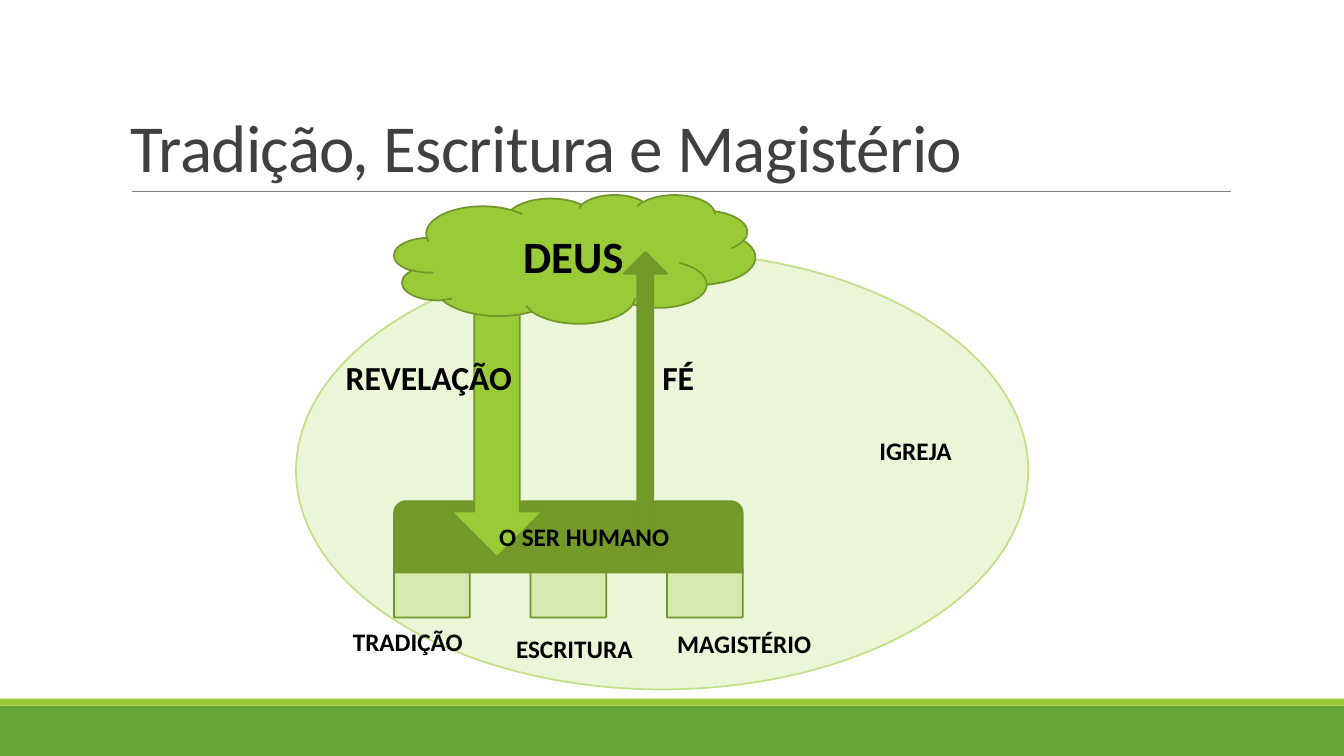
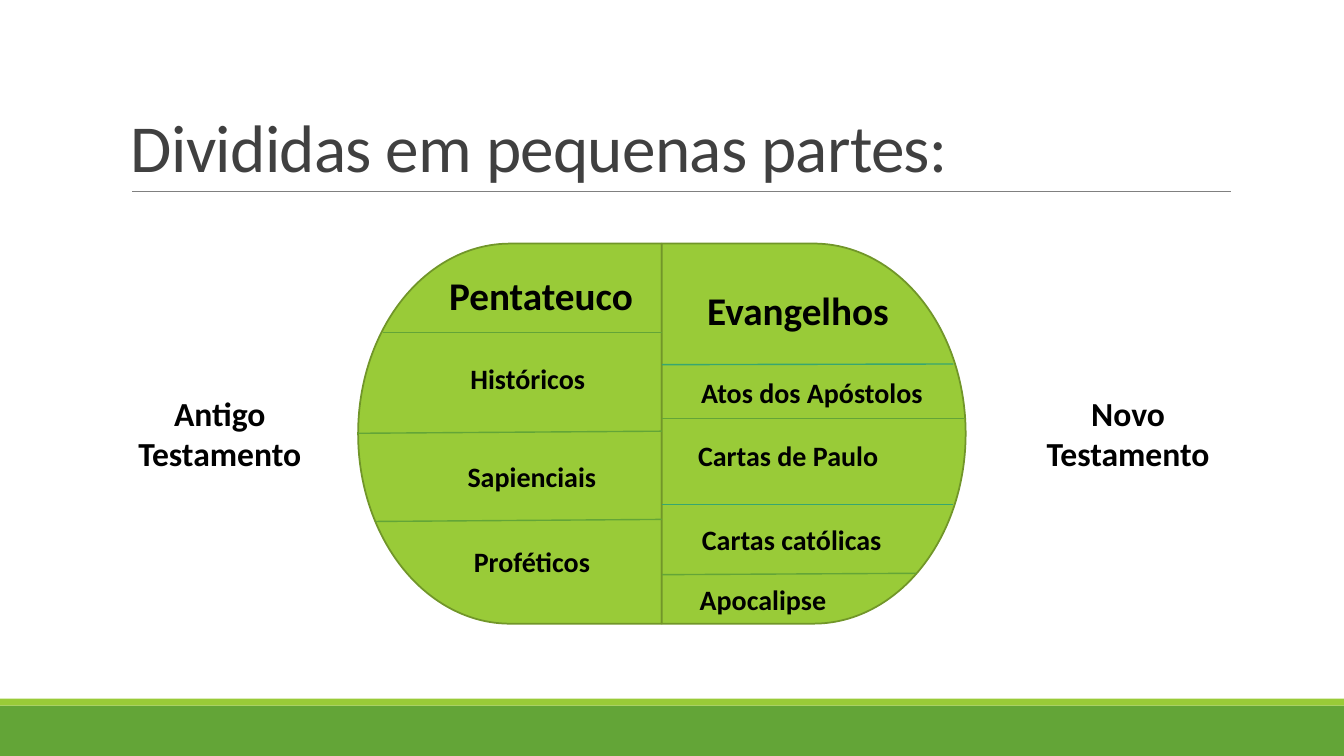
from dataclasses import dataclass

from lxml import etree
from pptx import Presentation
from pptx.dml.color import RGBColor
from pptx.enum.shapes import MSO_CONNECTOR, MSO_SHAPE
from pptx.enum.text import MSO_ANCHOR, PP_ALIGN
from pptx.oxml.ns import qn
from pptx.util import Pt

STRAIGHT = MSO_CONNECTOR.STRAIGHT
RECT = MSO_SHAPE.RECTANGLE
OVAL = MSO_SHAPE.OVAL
PILLAR = MSO_SHAPE.UP_ARROW_CALLOUT
ROUND_TOP = MSO_SHAPE.ROUND_2_SAME_RECTANGLE
DOWN_ARROW = MSO_SHAPE.DOWN_ARROW
UP_ARROW = MSO_SHAPE.UP_ARROW
CLOUD = MSO_SHAPE.CLOUD
DELAY = MSO_SHAPE.FLOWCHART_DELAY
CENTER = PP_ALIGN.CENTER
BOTTOM = MSO_ANCHOR.BOTTOM


@dataclass(frozen=True)
class Theme:
    font: str = "Calibri"
    title: str = "404040"
    text: str = "000000"
    rule: str = "808080"
    green: str = "63A537"
    lime: str = "99CB38"
    olive: str = "739A28"
    outline: str = "719629"
    pale: str = "EBF5D7"
    pale_outline: str = "C2E088"
    light: str = "D6EAAF"
    teal: str = "37A76F"
    title_size: int = 48
    huge: int = 32
    big: int = 28
    medium: int = 24
    normal: int = 20
    small: int = 18
    outline_width: float = 1.25


T = Theme()
WIDTH, HEIGHT = 960, 540

# Slide 1: labels are (text, size, left, top, width)
CHURCH_TITLE = "Tradição, Escritura e Magistério"
CHURCH_LABELS = [
    ("DEUS", T.huge, 360.5, 160, 98),
    ("REVELAÇÃO", T.medium, 239, 251.5, 134.5),
    ("FÉ", T.medium, 457, 251.5, 55),
    ("O SER HUMANO", T.small, 343.5, 368.5, 147.5),
    ("TRADIÇÃO", T.small, 239, 443.5, 104.5),
    ("ESCRITURA", T.small, 358, 449, 104.5),
    ("MAGISTÉRIO", T.small, 476.5, 445, 110),
    ("IGREJA", T.small, 599, 307.5, 110),
]
HUMAN = (281.5, 358, 249, 51)
PILLARS, PILLAR_TOP, PILLAR_W, PILLAR_H = 3, 388, 54, 53

# Slide 2: dividers are (outer x, outer y, y at the seam, colour)
BOOKS_TITLE = "Divididas em pequenas partes:"
BOOKS_LABELS = [
    ("Antigo Testamento", T.medium, 86.5, 277, 141),
    ("Novo Testamento", T.medium, 733, 277, 145.5),
    ("Pentateuco", T.big, 309.5, 190, 154),
    ("Históricos", T.normal, 306.5, 255, 141),
    ("Sapienciais", T.normal, 309.5, 325, 141),
    ("Proféticos", T.normal, 309.5, 385.5, 141),
    ("Evangelhos", T.big, 492.5, 201, 155),
    ("Atos dos Apóstolos", T.normal, 492.5, 264.5, 175),
    ("Cartas de Paulo", T.normal, 474, 309.5, 178),
    ("Cartas católicas", T.normal, 476.5, 370, 178),
    ("Apocalipse", T.normal, 456, 412.5, 178),
]
SEAM, HALF_TOP, HALF_W, HALF_H = 472.75, 174, 217, 271.5
DIVIDERS = [
    (273.5, 237.5, 237.5, T.green),
    (255.5, 309.5, 308, T.green),
    (268.5, 372.5, 371, T.green),
    (681, 260, 260.5, T.teal),
    (688.5, 299, 299, T.green),
    (681, 360.5, 360.5, T.teal),
    (654.5, 409.5, 410.5, T.green),
]


# Drawing helpers
def rgb(color):
    return RGBColor.from_string(color)


def add_shape(s, kind, box, fill, line=None):
    sp = s.shapes.add_shape(kind, *map(Pt, box))
    sp.shadow.inherit = False
    sp.fill.solid()
    sp.fill.fore_color.rgb = rgb(fill)
    if line:
        sp.line.color.rgb = rgb(line)
        sp.line.width = Pt(T.outline_width)
    else:
        sp.line.fill.background()
    return sp


def add_line(s, start, end, color, width):
    line = s.shapes.add_connector(STRAIGHT, *map(Pt, (*start, *end)))
    line.line.color.rgb = rgb(color)
    line.line.width = Pt(width)
    etree.SubElement(line._element.spPr, qn("a:effectLst"))


def add_text(s, text, size, box, color=T.text, bold=True):
    tf = s.shapes.add_textbox(*map(Pt, box)).text_frame
    tf.word_wrap = True
    p = tf.paragraphs[0]
    r = p.add_run()
    r.text = text
    p.font.name = T.font
    p.font.size = Pt(size)
    p.font.bold = bold
    p.font.color.rgb = rgb(color)
    return tf


def add_labels(s, labels):
    for text, size, left, top, width in labels:
        height = 1.2 * size + 7.2
        tf = add_text(s, text, size, (left, top, width, height))
        tf.paragraphs[0].alignment = CENTER


def add_slide(prs, title):
    s = prs.slides.add_slide(prs.slide_layouts[6])
    # Footer bands and title rule
    add_shape(s, RECT, (0, 504, WIDTH, 36), T.green)
    add_shape(s, RECT, (0, 499, WIDTH, 5), T.lime)
    add_line(s, (94.5, 136.8), (879, 136.8), T.rule, 0.5)
    # Title
    tf = add_text(s, title, T.title_size, (86.5, 22.2, 792, 114.5), T.title, False)
    tf.vertical_anchor = BOTTOM
    p = tf.paragraphs[0]
    p.line_spacing = 0.85
    p.runs[0]._r.get_or_add_rPr().set("spc", "-50")
    return s


# Slides
def build_church(prs):
    s = add_slide(prs, CHURCH_TITLE)
    add_shape(s, OVAL, (211.5, 180, 523, 312.5), T.pale, T.pale_outline)
    left, _, width, _ = HUMAN
    step = (width - PILLAR_W) / (PILLARS - 1)
    for i in range(PILLARS):
        box = (left + i * step, PILLAR_TOP, PILLAR_W, PILLAR_H)
        add_shape(s, PILLAR, box, T.light, T.outline)
    add_shape(s, ROUND_TOP, HUMAN, T.olive, T.outline)
    add_shape(s, DOWN_ARROW, (322.5, 174, 65, 224), T.lime, T.outline)
    add_shape(s, CLOUD, (281.5, 139, 258, 92), T.lime, T.outline)
    faith = add_shape(s, UP_ARROW, (445.5, 180, 31, 214.5), T.olive, T.outline)
    faith.adjustments[0] = 0.37
    add_labels(s, CHURCH_LABELS)


def build_books(prs):
    s = add_slide(prs, BOOKS_TITLE)
    for left, rotation in ((SEAM - HALF_W, 180), (SEAM, 0)):
        half = add_shape(s, DELAY, (left, HALF_TOP, HALF_W, HALF_H), T.lime, T.outline)
        half.rotation = rotation
    for x, y, seam_y, color in DIVIDERS:
        add_line(s, (SEAM, seam_y), (x, y), color, 1)
    add_labels(s, BOOKS_LABELS)


def main():
    prs = Presentation()
    prs.slide_width, prs.slide_height = Pt(WIDTH), Pt(HEIGHT)
    build_church(prs)
    build_books(prs)
    prs.save("out.pptx")


if __name__ == "__main__":
    main()
